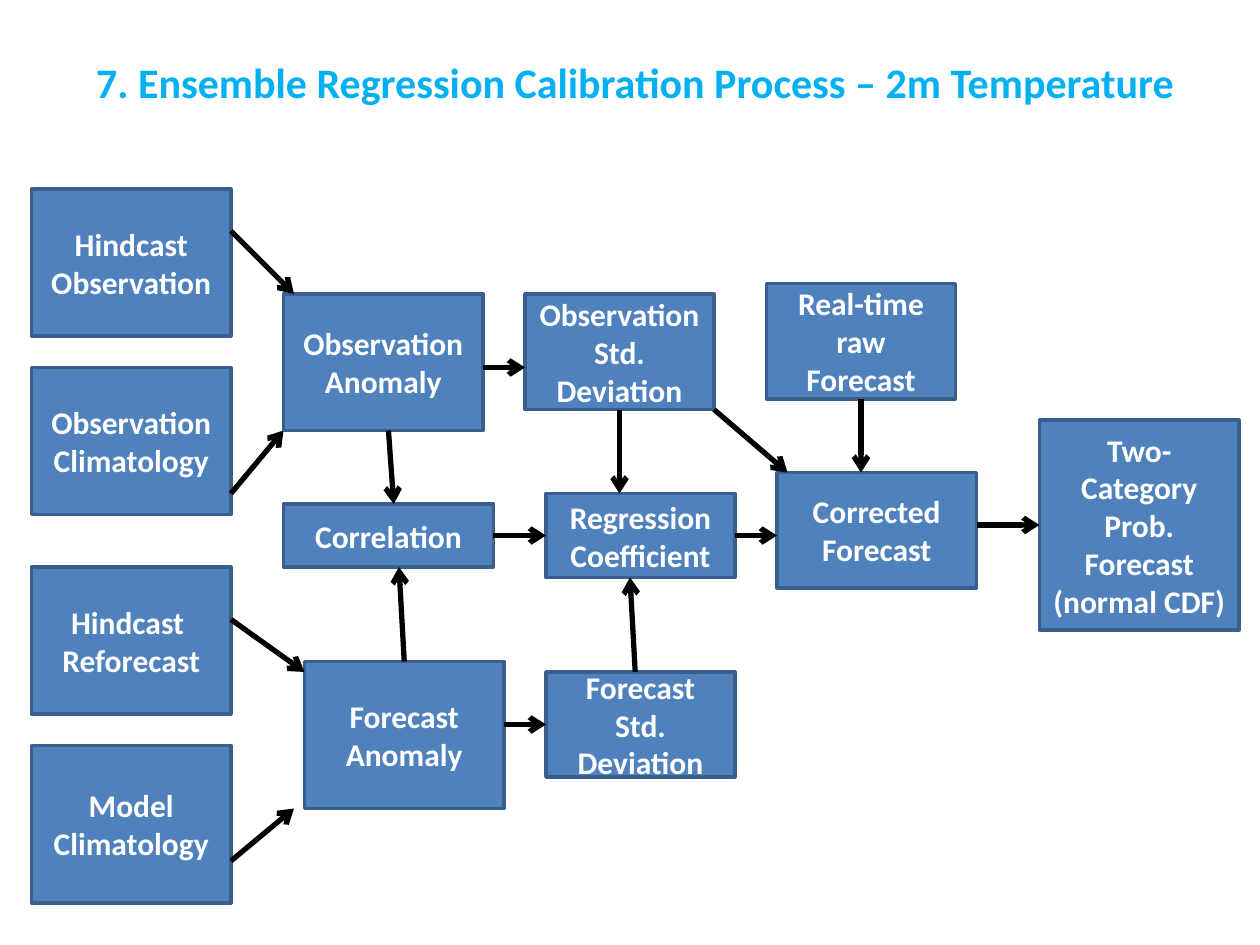
from pptx import Presentation
from pptx.dml.color import RGBColor
from pptx.enum.shapes import MSO_CONNECTOR, MSO_SHAPE
from pptx.enum.text import MSO_ANCHOR, PP_ALIGN
from pptx.oxml.ns import qn
from pptx.util import Pt
from lxml.etree import SubElement

EMU_PER_PX = 9525  # 96 px to the inch
FONT = "Calibri"
COLORS = {
    "title": "00B0F0",
    "box": "4F81BD",
    "border": "3A5F8C",
    "box_text": "FFFFFF",
    "arrow": "000000",
}
TOP, LEFT, BOTTOM, RIGHT = range(4)

# name: (text, left, top, width, height)
BOXES = {
    "hindcast_observation": ("Hindcast Observation", 24, 144, 152, 112),
    "observation_climatology": ("Observation Climatology", 24, 280, 152, 112),
    "hindcast_reforecast": ("Hindcast  Reforecast", 24, 432, 152, 112),
    "model_climatology": ("Model Climatology", 24, 568, 152, 120),
    "observation_anomaly": ("Observation Anomaly", 216, 224, 152, 104),
    "correlation": ("Correlation", 216, 384, 160, 48),
    "forecast_anomaly": ("Forecast Anomaly", 232, 504, 152, 112),
    "observation_deviation": ("Observation Std. Deviation", 400, 224, 144, 88),
    "regression": ("Regression Coefficient", 416, 376, 144, 64),
    "forecast_deviation": ("Forecast Std. Deviation", 416, 512, 144, 80),
    "raw_forecast": ("Real-time raw Forecast", 584, 216, 144, 88),
    "corrected_forecast": ("Corrected Forecast", 592, 360, 152, 88),
    "probability": ("Two-Category Prob. Forecast (normal CDF)", 792, 320, 152, 160),
}

# (start, end, joined start, joined end); a join is (box name, side)
ARROWS = [
    # Inputs to anomalies
    ((176, 176), (224, 224), None, None),
    ((176, 376), (216, 328), None, None),
    ((176, 472), (232, 512), None, None),
    ((176, 656), (224, 616), None, None),
    # Anomalies to correlation and deviations
    ((296, 328), (300, 384), None, None),
    ((308, 504), (304, 432), ("forecast_anomaly", TOP), None),
    ((368, 280), (400, 280), None, None),
    ((384, 552), (416, 552), None, ("forecast_deviation", LEFT)),
    # Into the regression coefficient
    ((376, 408), (416, 408), ("correlation", RIGHT), ("regression", LEFT)),
    ((472, 312), (472, 376), ("observation_deviation", BOTTOM), None),
    ((484, 512), (480, 440), None, None),
    # Into the corrected forecast and the probability
    ((544, 312), (600, 360), None, None),
    ((560, 408), (592, 408), ("regression", RIGHT), None),
    ((656, 304), (656, 360), ("raw_forecast", BOTTOM), None),
    ((744, 400), (792, 400), None, ("probability", LEFT)),
]


def px(*lengths):
    return [length * EMU_PER_PX for length in lengths]


def color(name):
    return RGBColor.from_string(COLORS[name])


def set_text(shape, text, size, color_name):
    text_frame = shape.text_frame
    text_frame.text = text
    text_frame.word_wrap = True
    text_frame.vertical_anchor = MSO_ANCHOR.MIDDLE
    paragraph = text_frame.paragraphs[0]
    paragraph.alignment = PP_ALIGN.CENTER
    font = paragraph.runs[0].font
    font.name = FONT
    font.size = Pt(size)
    font.bold = True
    font.color.rgb = color(color_name)


def add_title(slide, text):
    title = slide.shapes.add_textbox(*px(24, 29, 920, 67))
    set_text(title, text, 24, "title")


def add_box(slide, text, *frame):
    box = slide.shapes.add_shape(MSO_SHAPE.RECTANGLE, *px(*frame))
    box.shadow.inherit = False
    box.fill.solid()
    box.fill.fore_color.rgb = color("box")
    box.line.color.rgb = color("border")
    box.line.width = Pt(2)
    set_text(box, text, 18, "box_text")
    return box


def add_arrow(slide, boxes, start, end, start_join, end_join):
    arrow = slide.shapes.add_connector(MSO_CONNECTOR.STRAIGHT, *px(*start, *end))
    if start_join:
        name, side = start_join
        arrow.begin_connect(boxes[name], side)
    if end_join:
        name, side = end_join
        arrow.end_connect(boxes[name], side)
    arrow.line.color.rgb = color("arrow")
    arrow.line.width = Pt(3)
    # Open arrowhead, and no shadow
    SubElement(arrow.line._get_or_add_ln(), qn("a:tailEnd"), type="arrow")
    SubElement(arrow._element.spPr, qn("a:effectLst"))


def main():
    presentation = Presentation()
    presentation.slide_width, presentation.slide_height = px(960, 720)
    slide = presentation.slides.add_slide(presentation.slide_layouts[6])

    add_title(slide, "7. Ensemble Regression Calibration Process – 2m Temperature")
    boxes = {name: add_box(slide, *box) for name, box in BOXES.items()}
    for arrow in ARROWS:
        add_arrow(slide, boxes, *arrow)

    presentation.save("out.pptx")


if __name__ == "__main__":
    main()
